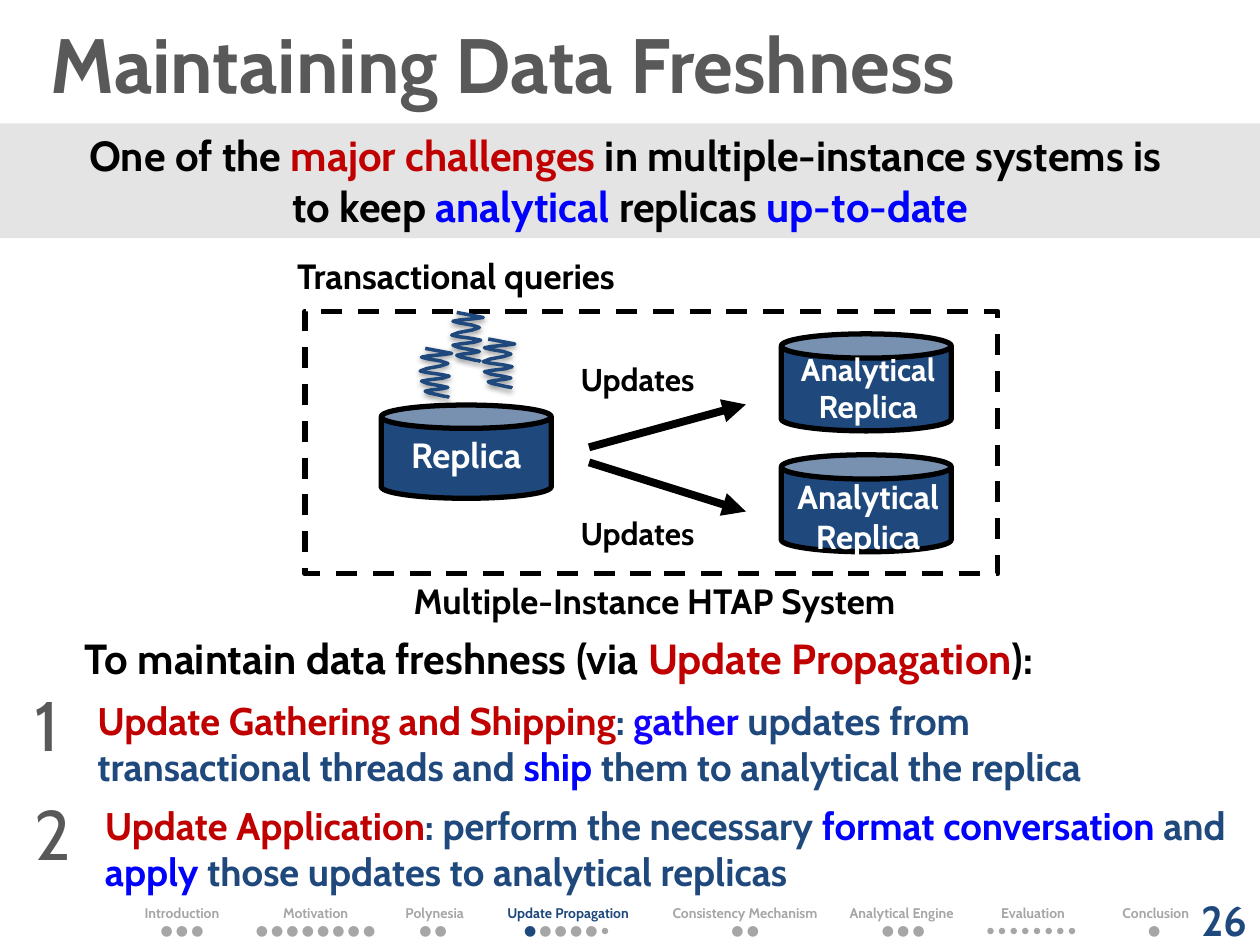
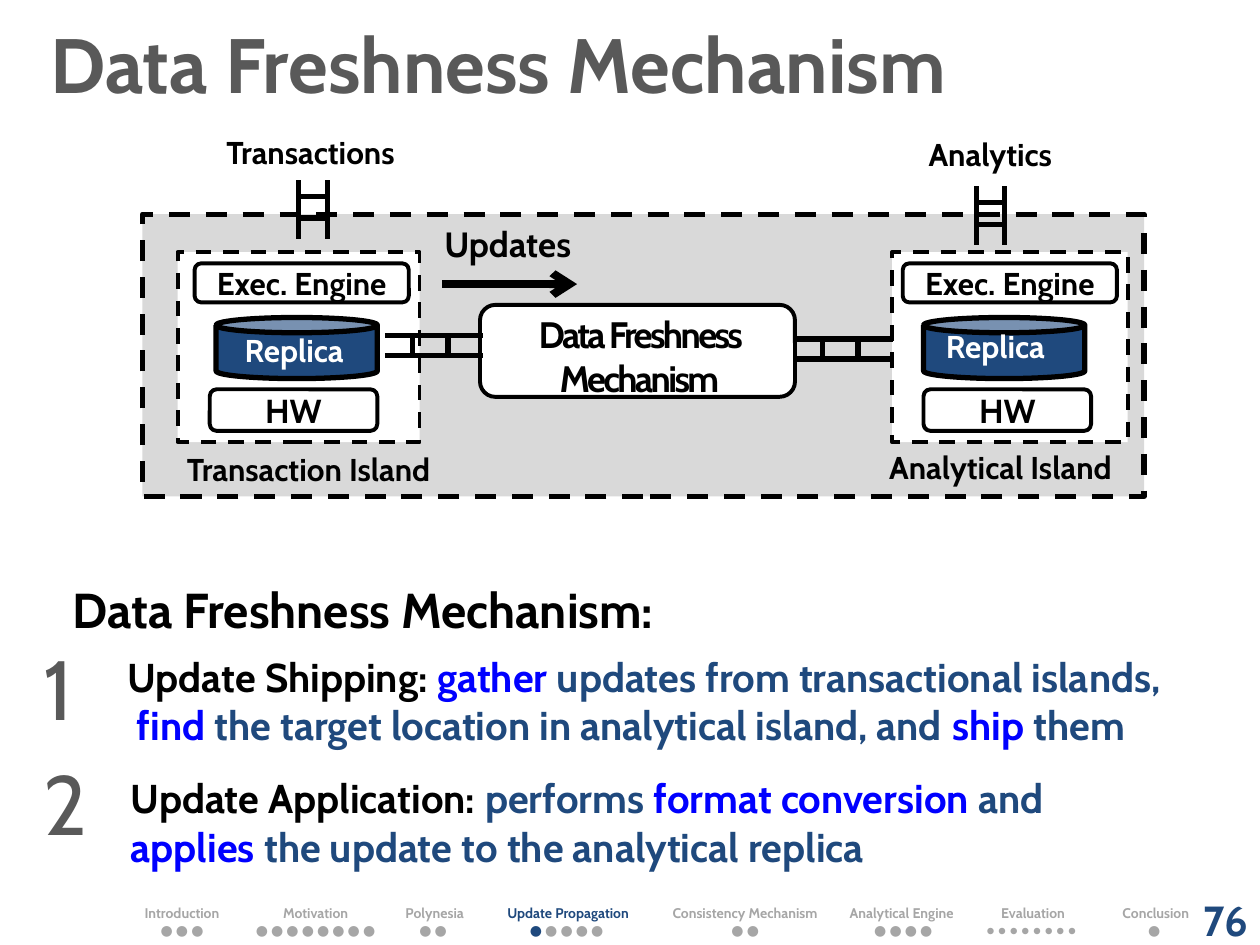
from pptx import Presentation
from pptx import util as u
from pptx.dml.color import RGBColor
from pptx.enum import dml, shapes, text
from pptx.oxml import parse_xml
from pptx.oxml.ns import nsdecls, qn

COLORS = {
    "ink": "000000", "white": "FFFFFF", "title": "595959", "band": "E4E4E4",
    "system": "D9D9D9", "navy": "1F497D", "red": "C00000", "blue": "0000FF",
    "violet": "1400FF", "muted": "A6A6A6",
}
RGB = {name: RGBColor.from_string(value) for name, value in COLORS.items()}
CENTER, LEFT, RIGHT = text.PP_ALIGN.CENTER, text.PP_ALIGN.LEFT, text.PP_ALIGN.RIGHT
TOP, MIDDLE = text.MSO_ANCHOR.TOP, text.MSO_ANCHOR.MIDDLE
RECT, ROUND, CAN = (shapes.MSO_SHAPE.RECTANGLE, shapes.MSO_SHAPE.ROUNDED_RECTANGLE,
                    shapes.MSO_SHAPE.CAN)
PLAIN_TABLE = "{2D5ABB26-0587-4C30-8999-92F81FD0307C}"  # no fill, no grid

deck = Presentation()
deck.slide_width, deck.slide_height = u.Inches(10), u.Inches(7.5)
COLUMNS = 100  # the grid has 100 columns and 75 rows of square cells
CELL = deck.slide_width // COLUMNS


def grid(*cells):
    return [round(cell * CELL) for cell in cells]


def write(frame, paragraphs, size, align=CENTER, bold=True, anchor=TOP, tracking=0):
    """Fill a frame; each paragraph is a list of (colour, words[, font]) runs."""
    frame.word_wrap, frame.vertical_anchor = True, anchor
    for number, runs in enumerate(paragraphs):
        paragraph = frame.add_paragraph() if number else frame.paragraphs[0]
        paragraph.alignment = align
        for color, words, *font in runs:
            if words == "\n":
                paragraph.add_line_break()
                continue
            run = paragraph.add_run()
            run.text = words
            style = {"name": font[0] if font else "Cabin", "size": u.Pt(size), "bold": bold}
            for key, value in style.items():
                setattr(run.font, key, value)
            run.font.color.rgb = RGB[color]
            if tracking:
                run.font._element.set("spc", str(tracking))


# Progress footer: section, its width in columns, its dots
SECTIONS = [
    ("Introduction", 9.8, "● ● ●"), ("Motivation", 11.4, "● ● ● ● ● ● ● ●"),
    ("Polynesia", 7.5, "● ● "), ("Update Propagation", 13.7, "● ● ● ● ● "),
    ("Consistency Mechanism", 14.4, "● ●"), ("Analytical Engine ", 10.7, "● ● ●"),
    ("Evaluation", 9.9, "● ● ● ● ● ● ● ● "), ("Conclusion", 9.6, "● "),
]
CURRENT = "Update Propagation"

# A thread: start, end of its straight stroke, then cubic curves, in 1/100 inch
THREAD_START, THREAD_STROKE = (4, 0), (25, 4)
THREAD_CURVES = [
    ((21, 5), (1, 6), (1, 7)), ((0, 8), (22, 10), (22, 12)),
    ((22, 14), (-1, 16), (0, 18)), ((0, 19), (23, 21), (23, 22)),
    ((23, 24), (1, 25), (1, 26)), ((1, 28), (21, 30), (22, 31)),
    ((22, 32), (4, 33), (4, 34)), ((3, 35), (16, 37), (19, 38)),
    ((22, 38), (23, 39), (23, 39)),
]
STEPS, FINE = 3, 100
thread_points, here = [THREAD_STROKE], THREAD_STROKE
for bend_a, bend_b, end in THREAD_CURVES:
    for step in range(1, STEPS + 1):
        t = step / STEPS
        thread_points.append(tuple(
            (1 - t) ** 3 * p + 3 * t * (1 - t) ** 2 * a + 3 * t * t * (1 - t) * b + t ** 3 * e
            for p, a, b, e in zip(here, bend_a, bend_b, end)))
    here = end
thread_points = [(x * FINE, y * FINE) for x, y in thread_points]

# Blocks: preset, box, fill, line width, dashed, caption size, caption
# Lines: x1, y1, x2, y2, width, arrowhead
# Labels: box, size, colour, words
# Ladders: left, top, right, bottom, offsets of the rungs along the ladder
# Prose: box, size, alignment, bold, paragraphs
freshness = {
    "title": "Maintaining Data Freshness", "page": "26", "extra_dot": True, "engine_dots": "● ● ●",
    "blocks": [
        (RECT, (0, 9.8, 100, 9.1), "band", 0, False, 24, [[
            ("ink", "One of the "), ("red", "major challenges "),
            ("ink", "in multiple-instance systems is "), ("ink", "\n"), ("ink", "to keep "),
            ("blue", "analytical"), ("ink", " replicas "), ("blue", "up-to-date")]]),
        (RECT, (24.2, 24.7, 55, 20.85), "white", 3, True, 0, []),
        (CAN, (30.25, 32.15, 13.5, 7.4), "navy", 3, False, 0, []),
    ] + [(CAN, (62, top, 13.5, 7.7), "navy", 3, False, 0, []) for top in (26.5, 36.1)],
    "threads": [(35.85, 24.8), (38.35, 26.9), (33.35, 27.65)],
    "lines": [(46.75, 35.5, 59.2, 32.1, 4.5, "triangle"),
              (46.75, 36.7, 59.2, 40.6, 4.5, "triangle")],
    "ladders": [],
    "labels": [
        ((27.4, 33.9, 19.2, 3), 20, "white", "Replica"),
        ((58.9, 27.25, 20, 7.1), 18, "white", "Analytical Replica"),
        ((58.9, 37.3, 20, 7.4), 19, "white", "Analytical Replica"),
        ((19.15, 19.7, 34.1, 3.2), 20, "ink", "Transactional queries"),
        ((40.65, 28.1, 19.9, 2.7), 18, "ink", "Updates"),
        ((40.65, 40.3, 19.9, 2.7), 18, "ink", "Updates"),
        ((30, 45.5, 43.9, 4.4), 20, "ink", "Multiple-Instance HTAP System"),
    ],
    "prose": [
        ((0.95, 49.7, 86.8, 5), 24, CENTER, True, [[
            ("ink", "To maintain data freshness (via "), ("red", "Update Propagation"),
            ("ink", "):")]]),
        ((1.75, 53.6, 5.8, 7.7), 40, LEFT, False, [[("title", "1")]]),
        ((6.75, 54.8, 98.3, 8.4), 22, LEFT, True, [[
            ("red", "Update Gathering and Shipping"), ("navy", ": "), ("violet", "gather "),
            ("navy", "updates from "), ("navy", "\n"), ("navy", "transactional threads and "),
            ("blue", "ship"), ("navy", " them to analytical the replica")]]),
        ((1.75, 62.25, 5.6, 7.7), 40, LEFT, False, [[("title", "2")]]),
        ((7.35, 63.15, 94.4, 8.4), 22, LEFT, True, [[
            ("red", "Update Application"), ("navy", ": perform the necessary "),
            ("blue", "format conversation "), ("navy", "and "), ("blue", "apply"),
            ("navy", " those updates to analytical replicas")]]),
    ],
}

mechanism = {
    "title": "Data Freshness Mechanism", "page": "76", "extra_dot": False, "engine_dots": "● ● ● ●",
    "blocks": [
        (RECT, (11.3, 17, 79.5, 22.4), "system", 3, True, 0, []),
        (ROUND, (38.1, 24.2, 25, 7.3), "white", 2.25, False, 0, []),
    ],
    "threads": [],
    "lines": [(35.1, 22.55, 45.8, 22.55, 4.5, "arrow")],
    "ladders": [
        (30.55, 26.6, 38.35, 28.2, (2.2, 5)), (63.1, 26.9, 70.9, 28.5, (2.2, 5)),
        (23.7, 14.3, 26, 18.95, (1.3, 3)), (77.5, 14.8, 79.7, 19.45, (1.3, 3)),
    ],
    "labels": [
        ((15.2, 10.1, 18.9, 2.7), 18, "ink", "Transactions"),
        ((71.4, 10.2, 14.4, 2.7), 18, "ink", "Analytics"),
        ((17.95, 25.8, 10.8, 4.2), 18, "white", "Replica"),
        ((69.9, 25.45, 18.2, 2.7), 18, "white", "Replica"),
        ((11.65, 35.25, 25.7, 2.7), 18, "ink", "Transaction Island"),
        ((64.65, 35.1, 29.5, 2.7), 18, "ink", "Analytical Island"),
        ((35.8, 24.25, 29.9, 8.1), 21, "ink", "Data Freshness Mechanism"),
        ((31.45, 17.15, 17.7, 2.9), 20, "ink", "Updates"),
    ],
    "prose": [
        ((-3.3, 45.5, 64.2, 5.7), 28, CENTER, True, [[("ink", "Data Freshness Mechanism:")]]),
        ((2.5, 50, 5.7, 9.1), 48, LEFT, False, [[("title", "1")]]),
        ((9.15, 51.25, 98.6, 8.8), 23, LEFT, True, [
            [("ink", "Update Shipping: "), ("blue", "gather "),
             ("navy", "updates from transactional islands,")],
            [("navy", " "), ("blue", "find "),
             ("navy", "the target location in analytical island, and "),
             ("blue", "ship "), ("navy", "them")]]),
        ((2.5, 59.15, 5.4, 9.1), 48, LEFT, False, [[("title", "2")]]),
        ((9.4, 60.9, 93.1, 9.1), 23, LEFT, True, [
            [("ink", "Update Application: "), ("navy", "performs "),
             ("blue", "format conversion "), ("navy", "and")],
            [("blue", "applies "), ("navy", "the update to the analytical replica")]]),
    ],
}
# Island left and width, then the lefts of its engine, replica and hardware
for island, width, engine, replica, hardware in [(14.1, 19.2, 15.45, 17.15, 16.65),
                                                 (70.8, 18.7, 71.65, 73.3, 73.3)]:
    mechanism["blocks"] += [
        (RECT, (island, 20, width, 15.1), "white", 2.25, True, 0, []),
        (CAN, (replica, 25.2, 12.8, 4.85), "navy", 3, False, 0, []),
        (ROUND, (hardware, 30.9, 13.3, 3.3), "white", 2.25, False, 19, [[("ink", "HW")]]),
        (ROUND, (engine, 20.9, 17, 3.1), "white", 2.25, False, 18, [[("ink", "Exec. Engine")]]),
    ]
for left, top, right, bottom, rungs in mechanism["ladders"]:
    if right - left > bottom - top:
        strokes = [(left, y, right, y) for y in (top, bottom)]
        strokes += [(left + rung, top, left + rung, bottom) for rung in rungs]
    else:
        strokes = [(x, top, x, bottom) for x in (left, right)]
        strokes += [(left, top + rung, right, top + rung) for rung in rungs]
    mechanism["lines"] += [(*stroke, 3, None) for stroke in strokes]

for content in (freshness, mechanism):
    slide = deck.slides.add_slide(deck.slide_layouts[5])
    title = slide.shapes.title
    title.left, title.top, title.width, title.height = grid(0, 0, 100, 10)
    title.text_frame.margin_left = grid(4)[0]
    write(title.text_frame, [[("title", content["title"])]], 44, LEFT, anchor=MIDDLE)

    for preset, box, fill, weight, dashed, size, caption in content["blocks"]:
        block = slide.shapes.add_shape(preset, *grid(*box))
        block.shadow.inherit = False
        block.fill.solid()
        block.fill.fore_color.rgb = RGB[fill]
        if weight:
            block.line.color.rgb = RGB["ink"]
            block.line.width = u.Pt(weight)
        else:
            block.line.fill.background()
        if dashed:
            block.line.dash_style = dml.MSO_LINE.DASH
        if caption:
            write(block.text_frame, caption, size, anchor=MIDDLE if weight else TOP)

    for left, top in content["threads"]:
        outline = slide.shapes.build_freeform(*(v * FINE for v in THREAD_START),
                                              scale=u.Inches(0.01) / FINE)
        outline.add_line_segments(thread_points, close=False)
        thread = outline.convert_to_shape(*grid(left, top))
        thread.fill.background()
        thread.line.color.rgb = RGB["navy"]
        thread.line.width = u.Pt(2)
        thread.shadow.inherit = False
        thread.element.spPr.find(qn("a:effectLst")).append(parse_xml(
            f'<a:outerShdw {nsdecls("a")} blurRad="{u.Pt(3.1)}" dist="{u.Pt(1.6)}" '
            f'dir="5400000" rotWithShape="0"><a:srgbClr val="{COLORS["ink"]}">'
            '<a:alpha val="38000"/></a:srgbClr></a:outerShdw>'))

    for x1, y1, x2, y2, weight, head in content["lines"]:
        line = slide.shapes.add_connector(shapes.MSO_CONNECTOR.STRAIGHT, *grid(x1, y1, x2, y2))
        line.line.color.rgb = RGB["ink"]
        line.line.width = u.Pt(weight)
        properties = line.element.spPr
        if head:
            properties.find(qn("a:ln")).append(
                parse_xml(f'<a:tailEnd {nsdecls("a")} type="{head}"/>'))
        properties.append(parse_xml(f'<a:effectLst {nsdecls("a")}/>'))

    for box, size, color, words in content["labels"]:
        label = slide.shapes.add_textbox(*grid(*box))
        write(label.text_frame, [[(color, words)]], size, tracking=-150 if size == 21 else 0)
    for box, size, align, bold, paragraphs in content["prose"]:
        write(slide.shapes.add_textbox(*grid(*box)).text_frame, paragraphs, size, align, bold)

    page = slide.shapes.add_textbox(*grid(80, 71, 20, 4))
    write(page.text_frame, [[("navy", content["page"])]], 24, RIGHT, anchor=MIDDLE)

    footer = slide.shapes.add_table(2, len(SECTIONS), *grid(9.55, 71.8, 87, 2.7))
    next(footer.element.iter(qn("a:tableStyleId"))).text = PLAIN_TABLE
    progress = footer.table
    progress.first_row = progress.horz_banding = False
    for row in progress.rows:
        row.height = grid(1.35)[0]
    for column, (section, width, dots) in enumerate(SECTIONS):
        progress.columns[column].width = grid(width)[0]
        font = "Calibri" if section == "Evaluation" else "Cabin"
        dots = content["engine_dots"] if section.startswith("Analytical") else dots
        name_color, dot_runs = "muted", [("muted", dots, font)]
        if section == CURRENT:
            name_color, dot_runs = "navy", [("navy", dots[0]), ("muted", dots[1:])]
            if content["extra_dot"]:
                dot_runs.append(("muted", "● ", "Calibri"))
        for row, runs in enumerate([[(name_color, section)], dot_runs]):
            cell = progress.cell(row, column)
            cell.fill.background()
            for side in ("left", "top", "right", "bottom"):
                setattr(cell, f"margin_{side}", 0)
            write(cell.text_frame, [runs], 8, bold=row == 0)

deck.save("out.pptx")
